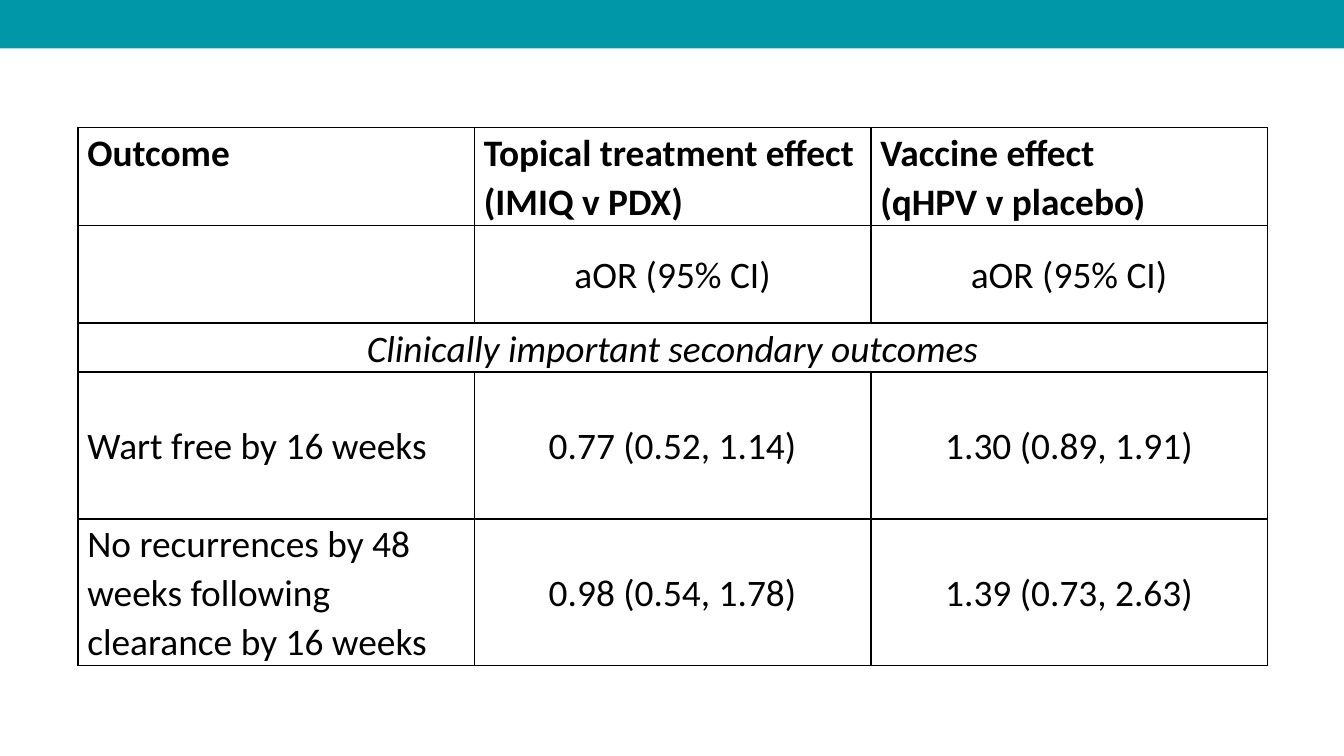
from dataclasses import dataclass

from lxml.etree import SubElement
from pptx import Presentation
from pptx.dml.color import RGBColor
from pptx.enum.shapes import MSO_SHAPE
from pptx.enum.text import MSO_ANCHOR as Anchor, PP_ALIGN as Align
from pptx.oxml.ns import qn
from pptx.util import Inches, Pt


@dataclass(frozen=True)
class Theme:
    band: str = "0097A9"
    ink: str = "000000"
    font: str = "Calibri"
    size: float = 20
    line_spacing: float = 1.07
    border: float = 1


@dataclass(frozen=True)
class CellText:
    text: str
    centered: bool = False
    middle: bool = False
    bold: bool = False
    italic: bool = False


@dataclass(frozen=True)
class Row:
    lines: int
    cells: tuple[CellText, ...]


THEME = Theme()
SLIDE_WIDTH = 10
SLIDE_HEIGHT = SLIDE_WIDTH * 9 / 16
COL_WIDTH = 2.95
TABLE_HEIGHT = 4


def heading(text: str) -> CellText:
    return CellText(text, bold=True)


def value(text: str) -> CellText:
    return CellText(text, centered=True, middle=True)


ROWS = (
    Row(2, (heading("Outcome"),
            heading("Topical treatment effect (IMIQ v PDX)"),
            heading("Vaccine effect\n(qHPV v placebo)"))),
    Row(2, (CellText(""), value("aOR (95% CI)"), value("aOR (95% CI)"))),
    Row(1, (CellText("Clinically important secondary outcomes",
                     centered=True, middle=True, italic=True),)),
    Row(3, (CellText("Wart free by 16 weeks", middle=True),
            value("0.77 (0.52, 1.14)"), value("1.30 (0.89, 1.91)"))),
    Row(3, (CellText("No recurrences by 48 weeks following clearance by 16 weeks"),
            value("0.98 (0.54, 1.78)"), value("1.39 (0.73, 2.63)"))),
)


def set_attrs(obj, values: dict) -> None:
    for name, val in values.items():
        setattr(obj, name, val)


def style_cell(cell) -> None:
    """Clear the fill, set the insets and draw all four borders."""
    set_attrs(cell, {"margin_left": Inches(0.07), "margin_right": Inches(0.07),
                     "margin_top": 0, "margin_bottom": 0})
    tc_pr = cell._tc.get_or_add_tcPr()
    for side in ("lnL", "lnR", "lnT", "lnB"):
        ln = SubElement(tc_pr, qn(f"a:{side}"), w=str(Pt(THEME.border)))
        fill = SubElement(ln, qn("a:solidFill"))
        SubElement(fill, qn("a:srgbClr"), val=THEME.ink)
    cell.fill.background()


def write_cell(cell, content: CellText) -> None:
    cell.vertical_anchor = Anchor.MIDDLE if content.middle else Anchor.TOP
    tf = cell.text_frame
    tf.text = content.text
    for p in tf.paragraphs:
        set_attrs(p, {"alignment": Align.CENTER if content.centered else Align.LEFT,
                      "line_spacing": THEME.line_spacing})
        for r in p.runs:
            set_attrs(r.font, {"name": THEME.font, "size": Pt(THEME.size),
                               "bold": content.bold, "italic": content.italic})
            r.font.color.rgb = RGBColor.from_string(THEME.ink)


def add_band(s, width: int) -> None:
    sp = s.shapes.add_shape(MSO_SHAPE.RECTANGLE, 0, 0, width, Inches(0.36))
    sp.shadow.inherit = False
    sp.fill.solid()
    sp.fill.fore_color.rgb = RGBColor.from_string(THEME.band)
    sp.line.fill.background()


def add_outcomes(s, rows: tuple[Row, ...]) -> None:
    n_cols = max(len(row.cells) for row in rows)
    line_height = TABLE_HEIGHT / sum(row.lines for row in rows)
    frame = s.shapes.add_table(len(rows), n_cols, Inches(0.58), Inches(0.95),
                               Inches(COL_WIDTH * n_cols), Inches(TABLE_HEIGHT))
    table = frame.table
    set_attrs(table, {"first_row": False, "horz_banding": False})
    for col in table.columns:
        col.width = Inches(COL_WIDTH)
    for i, row in enumerate(rows):
        table.rows[i].height = Inches(row.lines * line_height)
        for j in range(n_cols):
            style_cell(table.cell(i, j))
        if len(row.cells) == 1:
            table.cell(i, 0).merge(table.cell(i, n_cols - 1))
        for j, content in enumerate(row.cells):
            write_cell(table.cell(i, j), content)


def main() -> None:
    prs = Presentation()
    set_attrs(prs, {"slide_width": Inches(SLIDE_WIDTH),
                    "slide_height": Inches(SLIDE_HEIGHT)})
    s = prs.slides.add_slide(prs.slide_layouts[6])
    add_band(s, prs.slide_width)
    add_outcomes(s, ROWS)
    prs.save("out.pptx")


if __name__ == "__main__":
    main()
